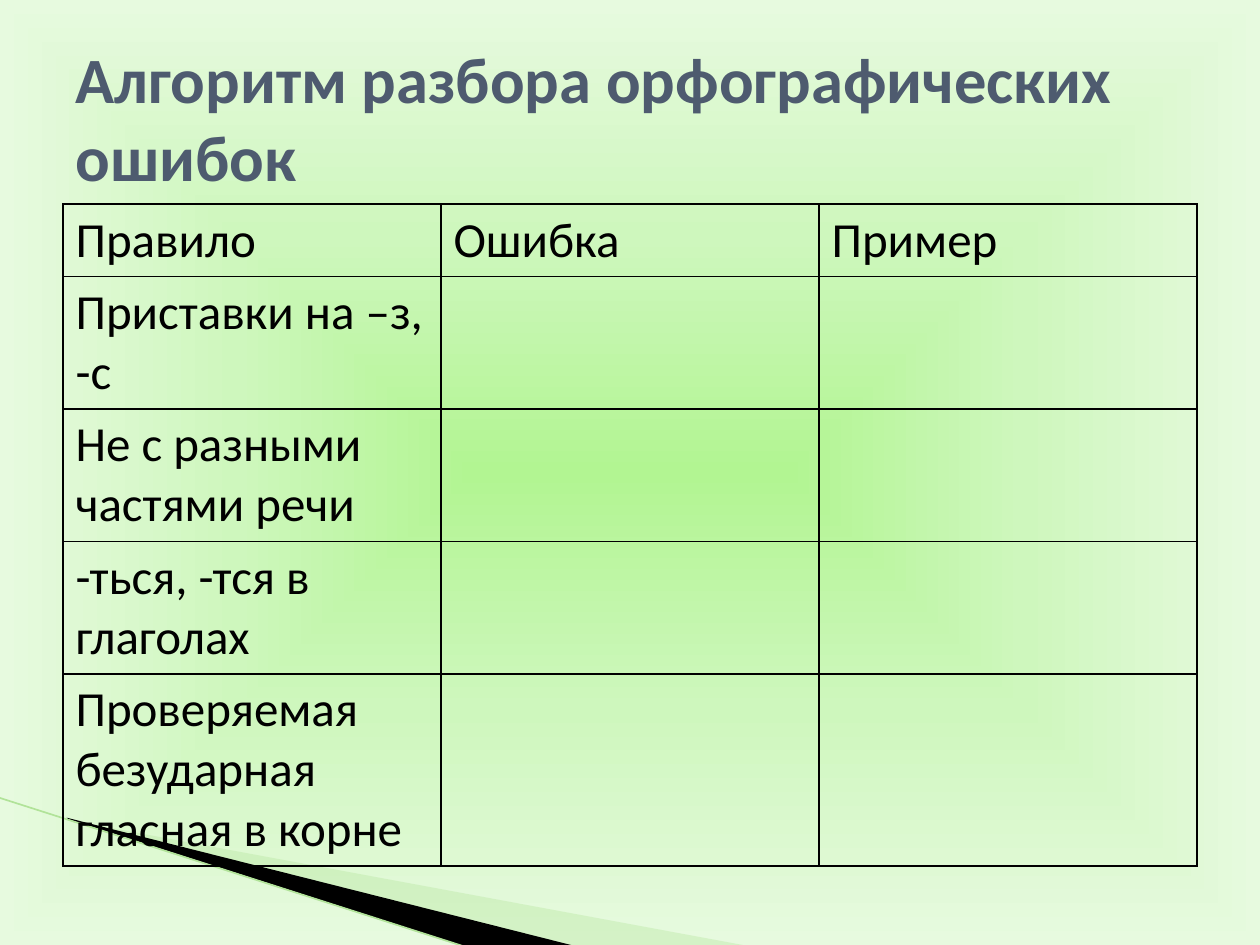
from pptx import Presentation
from pptx.dml.color import RGBColor
from pptx.enum.text import MSO_ANCHOR
from pptx.oxml import parse_xml
from pptx.oxml.ns import nsdecls
from pptx.util import Inches, Pt
from lxml.etree import SubElement

TITLE = "Алгоритм разбора орфографических ошибок"
HEADS = ("Правило", "Ошибка", "Пример")
RULES = (  # text, lines it takes
    ("Приставки на –з, -с", 2),
    ("Не с разными частями речи", 2),
    ("-ться, -тся в глаголах", 2),
    ("Проверяемая безударная гласная в корне", 3),
)
STOPS = ((0, "B2F592"), (50, "CEF7BD"), (100, "E7FADF"))
PALE_RAY = ((0.55, 6.51), (5.95, 7.51), (4.56, 7.51), (0.55, 6.5))
DARK_RAY = ((0.53, 6.49), (4.57, 7.51), (3.72, 7.52), (0.54, 6.5))

FONT = "Calibri"
BLACK = RGBColor(0x00, 0x00, 0x00)
SLATE = RGBColor(0x4E, 0x5B, 0x6F)
PALE = RGBColor(0xB8, 0xE7, 0xA1)
GREEN = RGBColor(0xB1, 0xE3, 0x99)
LEFT, WIDTH = 0.5, 9
PAD, LINE = 0.1, 0.475  # cell padding and line height


def paint_back(slide):
    stops = "".join(f'<a:gs pos="{pos * 1000}"><a:srgbClr val="{tint}"/></a:gs>'
                    for pos, tint in STOPS)
    slide.element.cSld.insert(0, parse_xml(
        f'<p:bg {nsdecls("p", "a")}><p:bgPr><a:gradFill rotWithShape="1">'
        f'<a:gsLst>{stops}</a:gsLst><a:path path="shape">'
        '<a:fillToRect l="50000" t="50000" r="50000" b="50000"/></a:path>'
        '</a:gradFill><a:effectLst/></p:bgPr></p:bg>'))


def add_ray(slide, points, color):
    start, *rest = [(Inches(x), Inches(y)) for x, y in points]
    pen = slide.shapes.build_freeform(*start)
    pen.add_line_segments(rest, close=True)
    ray = pen.convert_to_shape()
    ray.shadow.inherit = False
    ray.fill.solid()
    ray.fill.fore_color.rgb = color
    ray.line.fill.background()
    return ray


def style(par, size, color, bold=False):
    font = par.font
    font.name, font.size, font.bold = FONT, Pt(size), bold
    font.color.rgb = color


def add_borders(cell):
    props = cell._tc.get_or_add_tcPr()
    for spot, side in enumerate("LRTB"):
        props.insert(spot, parse_xml(
            f'<a:ln{side} {nsdecls("a")} w="12700"><a:solidFill>'
            f'<a:srgbClr val="{BLACK}"/></a:solidFill></a:ln{side}>'))


def add_grid(slide):
    rows = [(HEADS, 1)] + [((rule, "", ""), lines) for rule, lines in RULES]
    heights = [Inches(PAD + LINE * lines) for _, lines in rows]
    table = slide.shapes.add_table(
        len(rows), len(HEADS), Inches(LEFT), Inches(1.62),
        Inches(WIDTH), sum(heights)).table
    table.first_row = table.horz_banding = False
    for r, (texts, _) in enumerate(rows):
        table.rows[r].height = heights[r]
        for c, text in enumerate(texts):
            cell = table.cell(r, c)
            cell.text = text
            style(cell.text_frame.paragraphs[0], 28, BLACK)
            cell.fill.background()
            add_borders(cell)


def add_title(slide):
    frame = slide.shapes.add_textbox(
        Inches(LEFT), Inches(0.3), Inches(WIDTH), Inches(1.25)).text_frame
    frame.word_wrap = True
    frame.vertical_anchor = MSO_ANCHOR.MIDDLE
    frame.text = TITLE
    style(frame.paragraphs[0], 36.9, SLATE, True)


def main():
    deck = Presentation()
    deck.slide_width, deck.slide_height = Inches(10), Inches(7.5)
    slide = deck.slides.add_slide(deck.slide_layouts[6])
    paint_back(slide)

    pale = add_ray(slide, PALE_RAY, PALE)
    tint = pale.fill._xPr.solidFill[0]
    SubElement(tint, tint.tag.replace("srgbClr", "alpha"), val="40000")
    add_ray(slide, DARK_RAY, BLACK)

    edge = slide.shapes.add_connector(
        1, Inches(-0.01), Inches(6.33), Inches(3.71), Inches(7.52))
    edge.line.color.rgb = GREEN
    edge.line.width = Pt(0.95)
    edge._element.spPr.append(parse_xml(f'<a:effectLst {nsdecls("a")}/>'))

    add_grid(slide)
    add_title(slide)
    deck.save("out.pptx")


if __name__ == "__main__":
    main()
